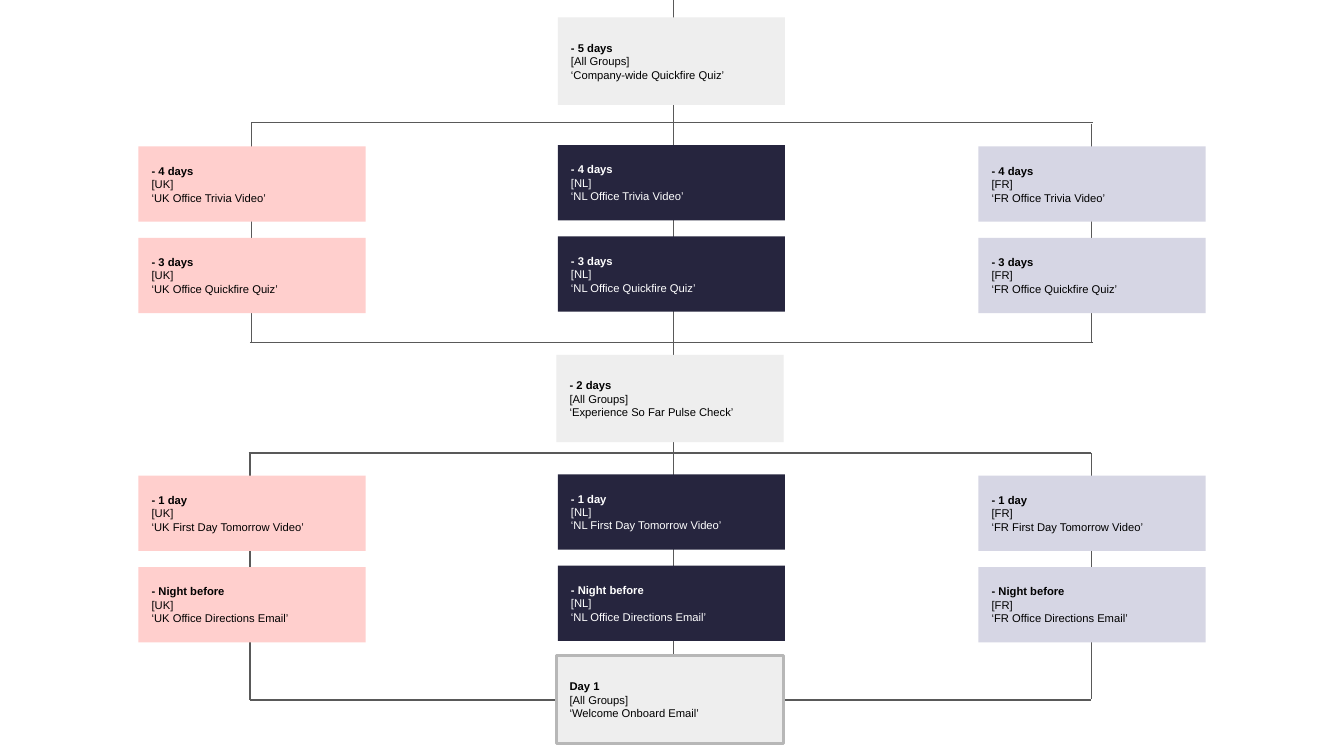
from lxml import etree
from pptx import Presentation
from pptx.dml.color import RGBColor
from pptx.enum.shapes import MSO_CONNECTOR, MSO_SHAPE
from pptx.enum.text import MSO_ANCHOR, PP_ALIGN
from pptx.oxml.ns import qn
from pptx.util import Inches, Pt

RECTANGLE = MSO_SHAPE.RECTANGLE
STRAIGHT = MSO_CONNECTOR.STRAIGHT
MIDDLE = MSO_ANCHOR.MIDDLE
LEFT = PP_ALIGN.LEFT

CARD_WIDTH = 1.69
OFFICE_HEIGHT = 0.56
GROUP_HEIGHT = 0.65

OFFICES = [
    ("UK", 1.03, 0, "FFCFCD", "000000"),
    ("FR", 7.28, 0, "D6D6E4", "000000"),
    ("NL", 4.15, -0.01, "26253E", "FFFFFF"),
]
OFFICE_STEPS = [
    (1.09, "- 4 days", "Office Trivia Video"),
    (1.77, "- 3 days", "Office Quickfire Quiz"),
    (3.54, "- 1 day", "First Day Tomorrow Video"),
    (4.22, "- Night before", "Office Directions Email"),
]
GROUP_STEPS = [
    (4.14, 4.88, "Day 1", "Welcome Onboard Email", "B7B7B7"),
    (4.15, 0.13, "- 5 days", "Company-wide Quickfire Quiz", None),
    (4.14, 2.64, "- 2 days", "Experience So Far Pulse Check", None),
]
BRANCHES = [
    (8.12, 0.92, 8.12, 2.55),
    (1.87, 0.91, 1.87, 2.55),
    (5.01, 5.13, 5.01, 0),
    (1.87, 0.91, 8.13, 0.91),
    (1.85, 3.37, 8.12, 3.37),
    (1.86, 2.55, 8.13, 2.55),
    (1.86, 3.37, 1.86, 5.21),
    (8.12, 3.37, 8.12, 5.2),
    (1.86, 5.21, 8.12, 5.21),
]


def color(value):
    return RGBColor.from_string(value)


class Timeline:
    font = "Arial"
    size = Pt(6)
    branch_color = "595959"

    def __init__(self, slide):
        self.slide = slide

    def branch(self, x1, y1, x2, y2):
        line = self.slide.shapes.add_connector(
            STRAIGHT, Inches(x1), Inches(y1), Inches(x2), Inches(y2))
        line.line.color.rgb = color(self.branch_color)
        line.line.width = Pt(0.75)
        etree.SubElement(line._element.spPr, qn("a:effectLst"))

    def run(self, paragraph, text, ink, bold=False):
        run = paragraph.add_run()
        run.text = text
        run.font.name = self.font
        run.font.size = self.size
        run.font.bold = bold
        run.font.color.rgb = color(ink)

    def card(self, left, top, height, when, audience, activity, fill,
             ink="000000", border=None):
        card = self.slide.shapes.add_shape(
            RECTANGLE, Inches(left), Inches(top), Inches(CARD_WIDTH), Inches(height))
        card.shadow.inherit = False
        card.fill.solid()
        card.fill.fore_color.rgb = color(fill)
        if border:
            card.line.color.rgb = color(border)
            card.line.width = Pt(1.5)
        else:
            card.line.fill.background()

        frame = card.text_frame
        frame.word_wrap = True
        frame.vertical_anchor = MIDDLE
        frame.margin_left = frame.margin_right = Inches(0.1)
        frame.margin_top = frame.margin_bottom = Inches(0.1)
        heading = frame.paragraphs[0]
        self.run(heading, when, ink, bold=True)
        heading.add_line_break()
        self.run(heading, f"[{audience}]", ink)
        detail = frame.add_paragraph()
        self.run(detail, f"‘{activity}’", ink)
        for paragraph in frame.paragraphs:
            paragraph.alignment = LEFT


def main():
    deck = Presentation()
    deck.slide_width = Inches(10)
    deck.slide_height = deck.slide_width * 9 // 16
    timeline = Timeline(deck.slides.add_slide(deck.slide_layouts[6]))

    for ends in BRANCHES:
        timeline.branch(*ends)
    for left, top, when, activity, border in GROUP_STEPS:
        timeline.card(left, top, GROUP_HEIGHT, when, "All Groups", activity,
                      "EEEEEE", border=border)
    for top, when, activity in OFFICE_STEPS:
        for office, left, shift, fill, ink in OFFICES:
            timeline.card(left, top + shift, OFFICE_HEIGHT, when, office,
                          f"{office} {activity}", fill, ink)

    deck.save("out.pptx")


if __name__ == "__main__":
    main()
